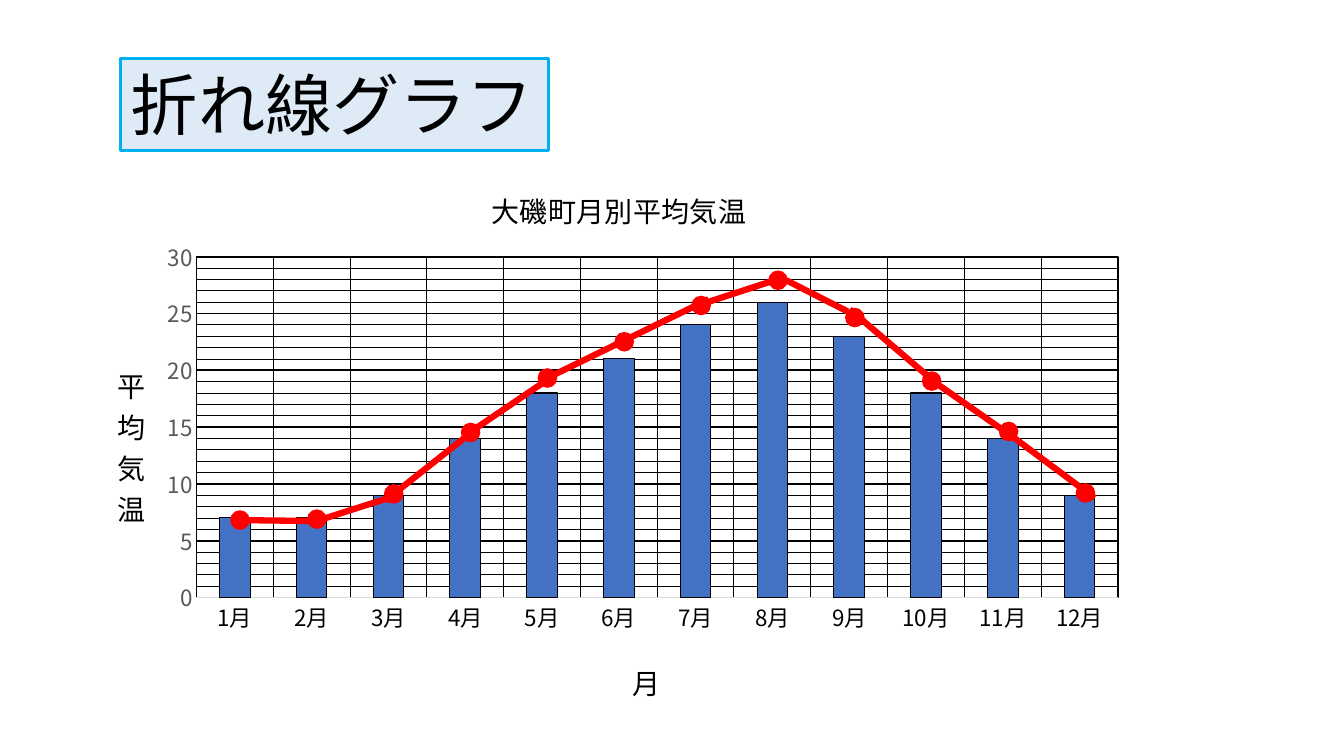
from dataclasses import dataclass

from lxml import etree
from pptx import Presentation
from pptx.chart.data import CategoryChartData
from pptx.dml.color import RGBColor
from pptx.enum.chart import XL_CHART_TYPE, XL_TICK_MARK
from pptx.enum.shapes import MSO_CONNECTOR, MSO_SHAPE
from pptx.enum.text import MSO_ANCHOR, MSO_AUTO_SIZE, PP_ALIGN
from pptx.oxml.ns import qn
from pptx.util import Pt

COLUMN = XL_CHART_TYPE.COLUMN_CLUSTERED
NO_TICK = XL_TICK_MARK.NONE
STRAIGHT = MSO_CONNECTOR.STRAIGHT
RECT, OVAL = MSO_SHAPE.RECTANGLE, MSO_SHAPE.OVAL


@dataclass(frozen=True)
class Theme:
    font: str = "Noto Sans CJK JP"
    black: str = "000000"
    white: str = "FFFFFF"
    grey: str = "595959"
    axis: str = "D9D9D9"
    bar: str = "4472C4"
    red: str = "FF0000"
    title_fill: str = "DEEBF7"
    title_line: str = "00B0F0"
    heading: int = 48
    chart_title: int = 20
    tick: int = 16


T = Theme()

MONTHS = [f"{m}月" for m in range(1, 13)]
TEMPERATURES = [7, 7, 9, 14, 18, 21, 24, 26, 23, 18, 14, 9]

# Hand-drawn line over the bars: dot tops by month, then segment ends
DOT_SIZE, DOT_LEFT, DOT_STEP = 13, 164.9, 54.9
DOT_TOPS = [365, 364.3, 346.3, 302.4, 263.5, 237.6,
            211.7, 193.7, 220.3, 265.7, 301.7, 345.6]
SEGMENTS = [
    (168.5, 371.5, 228.2, 372.2), (228.2, 371.5, 286.6, 352.8),
    (275, 357.8, 331.2, 313.2), (335.5, 308.9, 386.6, 274.3),
    (391, 270, 506.2, 213.8), (498.2, 218.2, 555.8, 199.4),
    (561.6, 200.2, 605.5, 222.5), (607, 221, 666, 271.4),
    (660.2, 267.8, 725, 313.2), (725, 313.2, 781.9, 355.7),
]


def rgb(value):
    return RGBColor.from_string(value)


def set_font(font, size, color):
    for name, value in {"name": T.font, "size": Pt(size), "bold": False}.items():
        setattr(font, name, value)
    font.color.rgb = rgb(color)
    # East Asian face follows the latin one
    latin = font._element.find(qn("a:latin")) if hasattr(font, "_element") else font._rPr.find(qn("a:latin"))
    ea = etree.Element(qn("a:ea"), typeface=T.font)
    latin.addnext(ea)


def set_line(line, color, width):
    line.color.rgb = rgb(color)
    line.width = Pt(width)


def add_box(slide, kind, box, fill, line, width):
    sp = slide.shapes.add_shape(kind, *map(Pt, box))
    sp.shadow.inherit = False
    sp.fill.solid()
    sp.fill.fore_color.rgb = rgb(fill)
    set_line(sp.line, line, width)
    return sp


def add_heading(slide, text, box):
    sp = add_box(slide, RECT, box, T.title_fill, T.title_line, 2.25)
    tf = sp.text_frame
    for name, value in {"word_wrap": False, "auto_size": MSO_AUTO_SIZE.SHAPE_TO_FIT_TEXT,
                        "vertical_anchor": MSO_ANCHOR.TOP}.items():
        setattr(tf, name, value)
    p = tf.paragraphs[0]
    p.alignment = PP_ALIGN.LEFT
    r = p.add_run()
    r.text = text
    set_font(r.font, T.heading, T.black)


def add_segment(slide, ends):
    cxn = slide.shapes.add_connector(STRAIGHT, *map(Pt, ends))
    set_line(cxn.line, T.red, 4.5)
    etree.SubElement(cxn._element.spPr, qn("a:effectLst"))


def set_layout(parent, index, **fractions):
    """Place a chart part by fractions of the chart's size."""
    layout = parent.find(qn("c:layout"))
    if layout is None:
        layout = etree.Element(qn("c:layout"))
        parent.insert(index, layout)
    manual = etree.SubElement(layout, qn("c:manualLayout"))
    if "w" in fractions:
        etree.SubElement(manual, qn("c:layoutTarget"), val="inner")
    for name in ("x", "y"):
        etree.SubElement(manual, qn(f"c:{name}Mode"), val="edge")
    for name, value in fractions.items():
        etree.SubElement(manual, qn(f"c:{name}"), val=str(value))


def add_outline(parent, color, width):
    sp_pr = etree.SubElement(parent, qn("c:spPr"))
    ln = etree.SubElement(sp_pr, qn("a:ln"), w=str(Pt(width)))
    fill = etree.SubElement(ln, qn("a:solidFill"))
    etree.SubElement(fill, qn("a:srgbClr"), val=color)


def set_title(title, text, x, y):
    tf = title.text_frame
    r = tf.paragraphs[0].add_run()
    r.text = text
    set_font(r.font, T.chart_title, T.black)
    set_layout(title._element, 1, x=x, y=y)
    return tf


def style_axis(axis, color, grid_width):
    for name, value in {"major_tick_mark": NO_TICK, "minor_tick_mark": NO_TICK,
                        "has_major_gridlines": True}.items():
        setattr(axis, name, value)
    set_font(axis.tick_labels.font, T.tick, color)
    set_line(axis.major_gridlines.format.line, T.black, grid_width)


def add_temperature_chart(slide, box):
    data = CategoryChartData()
    data.categories = MONTHS
    data.add_series("Series 1", TEMPERATURES)
    chart = slide.shapes.add_chart(COLUMN, *map(Pt, box), data).chart
    chart.has_legend = False
    set_font(chart.font, 10, T.black)
    set_title(chart.chart_title, "大磯町月別平均気温", 0.377, 0.047)

    # Bars
    plot = chart.plots[0]
    plot.gap_width = 150
    plot.vary_by_categories = False
    bars = plot.series[0].format
    bars.fill.solid()
    bars.fill.fore_color.rgb = rgb(T.bar)
    set_line(bars.line, T.black, 0.75)

    # Axes
    months, degrees = chart.category_axis, chart.value_axis
    style_axis(months, T.black, 0.75)
    set_line(months.format.line, T.axis, 0.75)
    set_title(months.axis_title, "月", 0.512, 0.885)

    style_axis(degrees, T.grey, 1.25)
    for name, value in {"minimum_scale": 0, "maximum_scale": 30, "major_unit": 5,
                        "minor_unit": 1, "has_minor_gridlines": True}.items():
        setattr(degrees, name, value)
    degrees.format.line.fill.background()
    add_outline(degrees._element.find(qn("c:minorGridlines")), T.black, 0.5)
    tf = set_title(degrees.axis_title, "平均気温", 0.02, 0.358)
    body = tf._txBody.find(qn("a:bodyPr"))
    body.set("rot", "0")
    body.set("vert", "wordArtVertRtl")

    # Plot frame and white ground
    area = chart._chartSpace.chart.plotArea
    set_layout(area, 0, x=0.1, y=0.18, w=0.88, h=0.605)
    add_outline(area, T.black, 1.25)
    ground = etree.Element(qn("c:spPr"))
    fill = etree.SubElement(ground, qn("a:solidFill"))
    etree.SubElement(fill, qn("a:srgbClr"), val=T.white)
    etree.SubElement(etree.SubElement(ground, qn("a:ln")), qn("a:noFill"))
    chart._chartSpace.chart.addnext(ground)


def main():
    prs = Presentation()
    prs.slide_width, prs.slide_height = Pt(960), Pt(540)
    slide = prs.slides.add_slide(prs.slide_layouts[6])

    add_heading(slide, "折れ線グラフ", (86.4, 41.8, 305.3, 65.5))
    add_temperature_chart(slide, (65.5, 110.9, 748.1, 402.5))

    # Line graph drawn on the bars
    for month, top in enumerate(DOT_TOPS):
        left = DOT_LEFT + month * DOT_STEP
        add_box(slide, OVAL, (left, top, DOT_SIZE, DOT_SIZE), T.red, T.red, 1)
    for ends in SEGMENTS:
        add_segment(slide, ends)

    prs.save("out.pptx")


if __name__ == "__main__":
    main()
